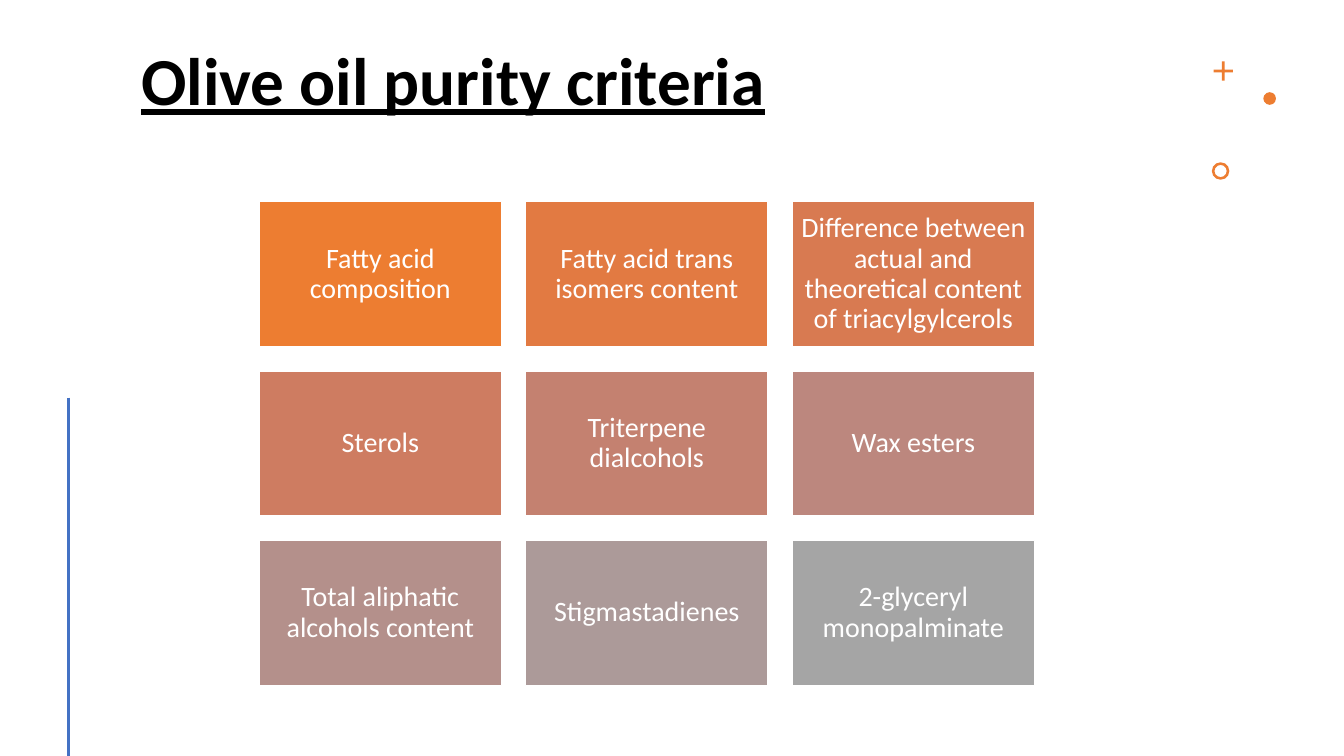
from lxml import etree
from pptx import Presentation
from pptx.dml.color import RGBColor
from pptx.enum.shapes import MSO_CONNECTOR, MSO_SHAPE
from pptx.enum.text import MSO_ANCHOR, MSO_AUTO_SIZE, PP_ALIGN
from pptx.oxml.ns import qn
from pptx.util import Inches, Pt

RECT, CROSS = MSO_SHAPE.RECTANGLE, MSO_SHAPE.CROSS
OVAL, DONUT = MSO_SHAPE.OVAL, MSO_SHAPE.DONUT
STRAIGHT = MSO_CONNECTOR.STRAIGHT
LEFT, CENTER = PP_ALIGN.LEFT, PP_ALIGN.CENTER
TOP, MIDDLE = MSO_ANCHOR.TOP, MSO_ANCHOR.MIDDLE
NO_FIT = MSO_AUTO_SIZE.NONE

ORANGE, BLUE, WHITE, BLACK = "ED7D31", "4472C4", "FFFFFF", "000000"
TITLE_ONLY = 5

CRITERIA = [
    ("Fatty acid composition", ORANGE),
    ("Fatty acid trans isomers content", "E27A42"),
    ("Difference between actual and theoretical content of triacylgylcerols", "D87A51"),
    ("Sterols", "CE7C61"),
    ("Triterpene dialcohols", "C48170"),
    ("Wax esters", "BC877E"),
    ("Total aliphatic alcohols content", "B4908B"),
    ("Stigmastadienes", "AC9A99"),
    ("2-glyceryl monopalminate", "A5A5A5"),
]

# Tile grid, in percent of the slide's width and height
COLS = 3
GRID_X, GRID_Y = 19.28, 26.67
STEP_X, STEP_Y = 19.83, 22.4
TILE_W, TILE_H = 18.04, 19.2


def rgb(value):
    return RGBColor.from_string(value)


def write(tf, text, size=20, color=WHITE, bold=False, underline=False,
          align=CENTER, anchor=MIDDLE):
    tf.word_wrap = True
    tf.auto_size = NO_FIT
    tf.vertical_anchor = anchor
    p = tf.paragraphs[0]
    p.alignment = align
    p.line_spacing = 0.9
    r = p.add_run()
    r.text = text
    r.font.name = "Calibri"
    r.font.size = Pt(size)
    r.font.bold = bold
    r.font.underline = underline
    r.font.color.rgb = rgb(color)


class Deck:
    """Slide builder; lengths are percent of the slide's size."""

    def __init__(self, prs):
        self.prs = prs
        self.s = prs.slides.add_slide(prs.slide_layouts[TITLE_ONLY])

    def x(self, share):
        return round(self.prs.slide_width * share / 100)

    def y(self, share):
        return round(self.prs.slide_height * share / 100)

    def title(self, text, x, y, w, h):
        sp = self.s.shapes.title
        sp.left, sp.top, sp.width, sp.height = self.x(x), self.y(y), self.x(w), self.y(h)
        write(sp.text_frame, text, size=48, color=BLACK, bold=True,
              underline=True, align=LEFT, anchor=TOP)

    def shape(self, kind, x, y, w, h, fill, adjust=None):
        sp = self.s.shapes.add_shape(kind, self.x(x), self.y(y), self.x(w), self.y(h))
        sp.shadow.inherit = False
        sp.fill.solid()
        sp.fill.fore_color.rgb = rgb(fill)
        sp.line.fill.background()
        if adjust is not None:
            sp.adjustments[0] = adjust
        return sp

    def tile(self, index, text, fill):
        row, col = divmod(index, COLS)
        sp = self.shape(RECT, GRID_X + col * STEP_X, GRID_Y + row * STEP_Y,
                        TILE_W, TILE_H, fill)
        sp.line.color.rgb = rgb(WHITE)
        sp.line.width = Pt(1)
        tf = sp.text_frame
        tf.margin_left = tf.margin_right = Inches(0.08)
        tf.margin_top = tf.margin_bottom = Inches(0.08)
        write(tf, text)

    def line(self, x1, y1, x2, y2, color, width):
        sp = self.s.shapes.add_connector(STRAIGHT, self.x(x1), self.y(y1),
                                         self.x(x2), self.y(y2))
        sp.line.color.rgb = rgb(color)
        sp.line.width = Pt(width)
        etree.SubElement(sp._element.spPr, qn("a:effectLst"))


def main():
    prs = Presentation()
    prs.slide_width, prs.slide_height = Inches(13.33), Inches(7.5)
    deck = Deck(prs)

    # Title
    deck.title("Olive oil purity criteria", 9.75, 5.6, 76.74, 17.47)

    # Corner ornaments: plus, dot and ring
    deck.shape(CROSS, 90.3, 8.13, 1.43, 2.53, ORANGE, adjust=0.43)
    deck.shape(OVAL, 94, 12.2, 0.94, 1.67, ORANGE)
    deck.shape(DONUT, 90.17, 21.47, 1.3, 2.31, ORANGE, adjust=0.15)

    # Accent line at the left edge
    deck.line(5.1, 52.6, 5.1, 100, BLUE, 2)

    # Criteria tiles
    for i, (text, fill) in enumerate(CRITERIA):
        deck.tile(i, text, fill)

    prs.save("out.pptx")


if __name__ == "__main__":
    main()
